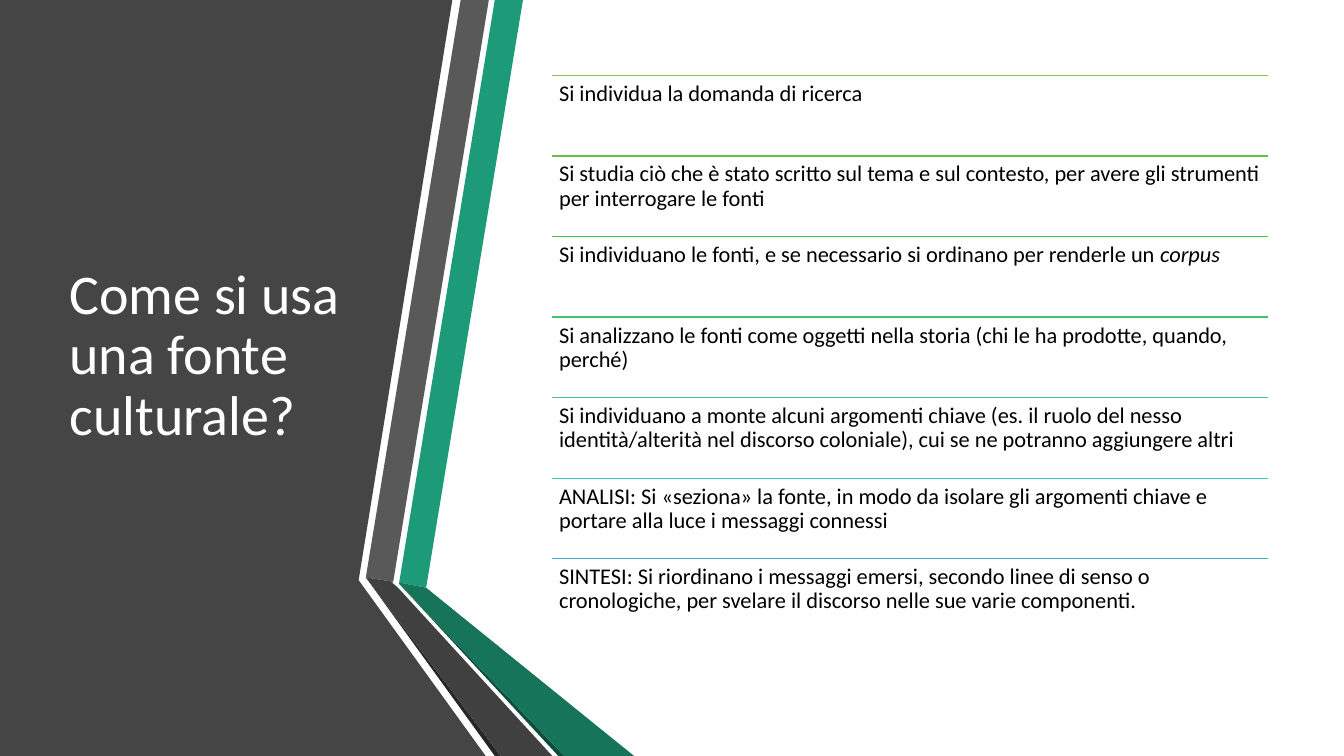
from lxml.etree import SubElement
from pptx import Presentation
from pptx.dml.color import RGBColor
from pptx.enum.shapes import MSO_CONNECTOR
from pptx.enum.text import MSO_ANCHOR, MSO_AUTO_SIZE, PP_ALIGN
from pptx.oxml.ns import qn
from pptx.util import Cm, Pt

# Content: each step has a rule colour and (text, italic) pieces
TITLE = "Come si usa una fonte culturale?"
STEPS = [
    ("8BC145", [("Si individua la domanda di ricerca", False)]),
    ("65C343", [("Si studia ciò che è stato scritto sul tema e sul contesto, per avere "
                 "gli strumenti per interrogare le fonti", False)]),
    ("40C543", [("Si individuano le fonti, e se necessario si ordinano per renderle un ", False),
                ("corpus", True)]),
    ("3EC76A", [("Si analizzano le fonti come oggetti nella storia (chi le ha prodotte, "
                 "quando, perché)", False)]),
    ("3BCA93", [("Si individuano a monte alcuni argomenti chiave (es. il ruolo del nesso "
                 "identità/alterità nel discorso coloniale), cui se ne potranno "
                 "aggiungere altri", False)]),
    ("39CCBE", [("ANALISI: Si «seziona» la fonte, in modo da isolare gli argomenti chiave e "
                 "portare alla luce i messaggi connessi", False)]),
    ("36AFCE", [("SINTESI: Si riordinano i messaggi emersi, secondo linee di senso o "
                 "cronologiche, per svelare il discorso nelle sue varie componenti.", False)]),
]

# Geometry in centimetres
WIDTH, HEIGHT = 33.87, 19.05
STEP_LEFT, STEP_TOP, STEP_WIDTH, STEP_HEIGHT = 13.92, 1.9, 18.03, 2.03
INSET = 0.17
PANEL = ("454545", [(0, 0), (11.4, 0), (9.04, 14.62), (12.24, HEIGHT), (0, HEIGHT)])
RIBBONS = [
    ("1D9A78", [(10.06, 14.68), (10.74, 14.81), (13.18, 0), (12.47, 0)]),
    ("595959", [(12.32, 0), (11.61, 0), (9.22, 14.55), (9.91, 14.66)]),
    ("262626", [(9.22, 14.55), (12.47, HEIGHT), (12.62, HEIGHT)]),
    ("0E4D3C", [(10.06, 14.71), (14.07, HEIGHT), (14.22, HEIGHT)]),
    ("16745A", [(10.06, 14.71), (14.22, HEIGHT), (15.98, HEIGHT), (10.74, 14.81),
                (10.06, 14.68)]),
    ("404040", [(13.92, HEIGHT), (10.03, 14.81), (9.88, 14.68), (9.91, 14.66),
                (9.22, 14.55), (12.62, HEIGHT)]),
]


def rgb(color):
    return RGBColor.from_string(color)


def write(frame, pieces, size, color, anchor=MSO_ANCHOR.TOP, inset=None):
    frame.word_wrap = True
    frame.auto_size = MSO_AUTO_SIZE.NONE
    frame.vertical_anchor = anchor
    if inset is not None:
        frame.margin_left = frame.margin_right = Cm(inset)
        frame.margin_top = frame.margin_bottom = Cm(inset)
    paragraph = frame.paragraphs[0]
    paragraph.alignment = PP_ALIGN.LEFT
    paragraph.line_spacing = 0.9
    for text, italic in pieces:
        run = paragraph.add_run()
        run.text = text
        run.font.name = "Calibri"
        run.font.size = Pt(size)
        run.font.italic = italic
        run.font.color.rgb = rgb(color)


def draw_polygon(shapes, color, corners):
    points = [(Cm(x), Cm(y)) for x, y in corners]
    builder = shapes.build_freeform(*points[0])
    builder.add_line_segments(points[1:], close=True)
    polygon = builder.convert_to_shape()
    polygon.shadow.inherit = False
    polygon.fill.solid()
    polygon.fill.fore_color.rgb = rgb(color)
    polygon.line.fill.background()


def draw_rule(shapes, color, top):
    rule = shapes.add_connector(MSO_CONNECTOR.STRAIGHT, Cm(STEP_LEFT), Cm(top),
                                Cm(STEP_LEFT + STEP_WIDTH), Cm(top))
    rule.line.color.rgb = rgb(color)
    rule.line.width = Pt(1)
    SubElement(rule._element.spPr, qn("a:effectLst"))


def main():
    deck = Presentation()
    deck.slide_width, deck.slide_height = Cm(WIDTH), Cm(HEIGHT)
    slide = deck.slides.add_slide(deck.slide_layouts[5])
    shapes = slide.shapes

    # Dark panel and folded ribbons
    for color, corners in [PANEL, *RIBBONS]:
        draw_polygon(shapes, color, corners)

    # Title, brought in front of the panel
    title = shapes.title
    title.left, title.top, title.width, title.height = Cm(1.5), Cm(1.9), Cm(7.72), Cm(14.17)
    write(title.text_frame, [(TITLE, False)], 40, "FFFFFF", anchor=MSO_ANCHOR.MIDDLE)
    shapes._spTree.append(title._element)

    # Steps, each under its rule
    for index, (color, pieces) in enumerate(STEPS):
        top = STEP_TOP + index * STEP_HEIGHT
        draw_rule(shapes, color, top)
        step = shapes.add_textbox(Cm(STEP_LEFT), Cm(top), Cm(STEP_WIDTH), Cm(STEP_HEIGHT))
        write(step.text_frame, pieces, 16, "000000", inset=INSET)

    deck.save("out.pptx")


if __name__ == "__main__":
    main()
